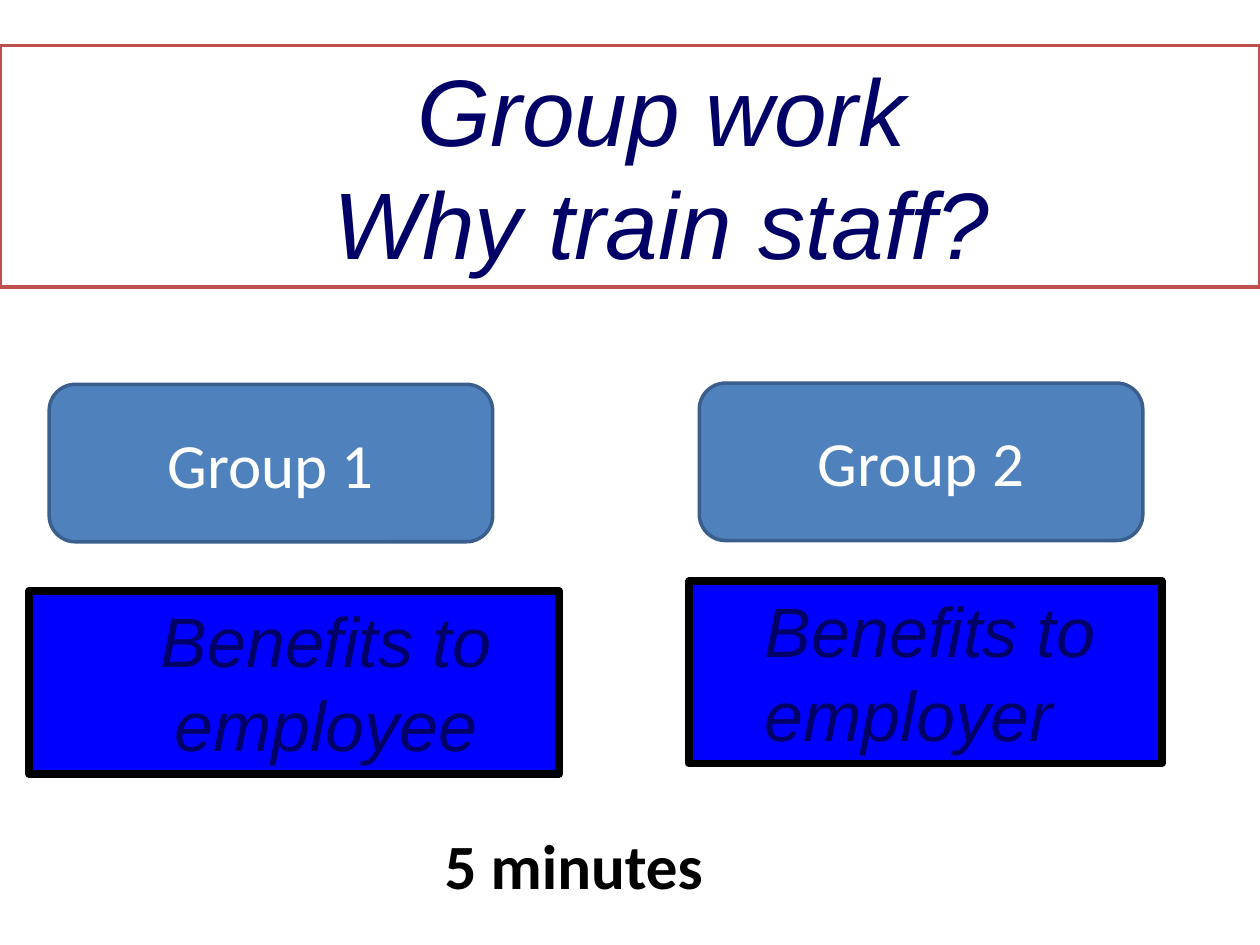
from pptx import Presentation
from pptx.dml.color import RGBColor
from pptx.enum.shapes import MSO_SHAPE as Shape
from pptx.enum.text import MSO_ANCHOR as Anchor, MSO_AUTO_SIZE as Fit, PP_ALIGN as Align
from pptx.util import Inches, Pt

WHITE = RGBColor(0xFF, 0xFF, 0xFF)
BLACK = RGBColor(0x00, 0x00, 0x00)
NAVY = RGBColor(0x00, 0x00, 0x66)
BLUE = RGBColor(0x00, 0x00, 0xFF)
STEEL = RGBColor(0x4F, 0x81, 0xBD)
EDGE = RGBColor(0x3A, 0x5F, 0x8C)
RED = RGBColor(0xC0, 0x50, 0x4D)


def write(shape, text, size, color, font="Calibri", bold=False, italic=False,
          align=Align.CENTER, anchor=Anchor.TOP, left=0.1, fit=Fit.NONE):
    """Fill a shape with text, one paragraph for each line."""
    frame = shape.text_frame
    frame.text = text
    frame.word_wrap = True
    frame.auto_size = fit
    frame.vertical_anchor = anchor
    frame.margin_left, frame.margin_right = Inches(left), Inches(0.1)
    frame.margin_top = frame.margin_bottom = Inches(0.05)
    for para in frame.paragraphs:
        para.alignment = align
        for run in para.runs:
            run.font.name = font
            run.font.size = Pt(size)
            run.font.bold = bold
            run.font.italic = italic
            run.font.color.rgb = color


def paint(shape, fill, line, width):
    shape.fill.solid()
    shape.fill.fore_color.rgb = fill
    shape.line.color.rgb = line
    shape.line.width = Pt(width)


def add_box(slide, kind, box, fill, line, width):
    shape = slide.shapes.add_shape(kind, *map(Inches, box))
    shape.shadow.inherit = False
    paint(shape, fill, line, width)
    return shape


def add_title(slide, box, text):
    title = slide.shapes.title
    title.left, title.top, title.width, title.height = map(Inches, box)
    paint(title, WHITE, RED, 2)
    write(title, text, 54, NAVY, font="Arial", italic=True, left=0.6)


def add_gain(slide, box, text, align):
    shape = add_box(slide, Shape.RECTANGLE, box, BLUE, BLACK, 4.5)
    write(shape, text, 40, NAVY, font="Arial", italic=True, align=align, left=0.6)


def add_group(slide, box, text):
    shape = add_box(slide, Shape.ROUNDED_RECTANGLE, box, STEEL, EDGE, 2)
    write(shape, text, 36, WHITE, anchor=Anchor.MIDDLE)


def add_time(slide, box, text):
    shape = slide.shapes.add_textbox(*map(Inches, box))
    write(shape, text, 36, BLACK, bold=True, align=Align.LEFT,
          fit=Fit.SHAPE_TO_FIT_TEXT)


def main():
    deck = Presentation()
    deck.slide_width, deck.slide_height = Inches(10), Inches(7.5)
    slide = deck.slides.add_slide(deck.slide_layouts[5])

    # Heading
    add_title(slide, (0, 0.36, 10, 1.92), "Group work\nWhy train staff?")

    # Benefits for each side
    add_gain(slide, (0.23, 4.69, 4.21, 1.45), "Benefits to employee", Align.CENTER)
    add_gain(slide, (5.47, 4.61, 3.75, 1.45), "Benefits to employer", Align.LEFT)

    # Groups above the benefits
    for num, (left, top) in enumerate([(0.39, 3.05), (5.55, 3.04)], 1):
        add_group(slide, (left, top, 3.52, 1.25), f"Group {num}")

    # Time allowed
    add_time(slide, (3.43, 6.51, 3.78, 0.71), "5 minutes")

    deck.save("out.pptx")


if __name__ == "__main__":
    main()
